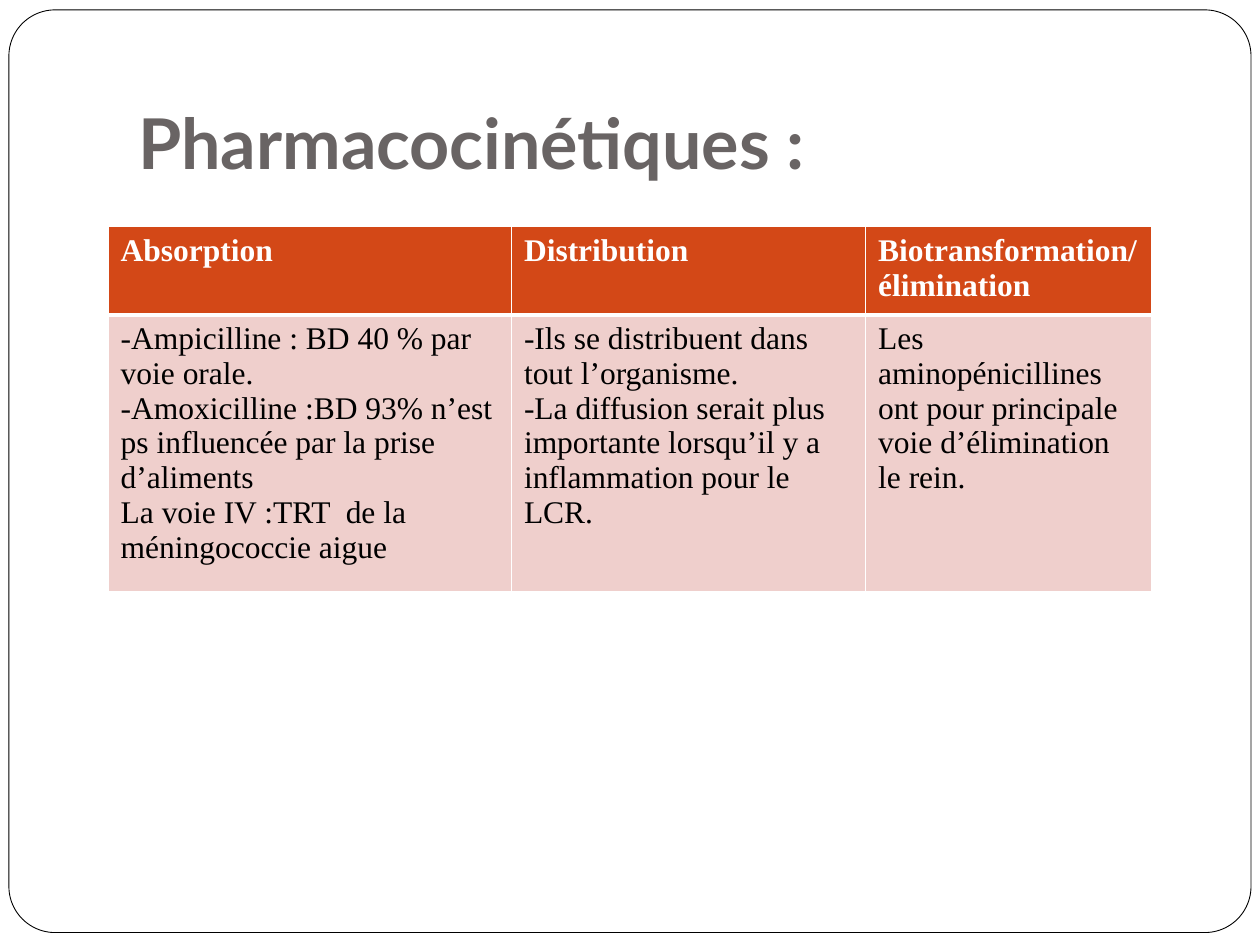
from dataclasses import dataclass

from lxml import etree
from pptx import Presentation
from pptx.dml.color import RGBColor
from pptx.enum.shapes import MSO_SHAPE
from pptx.enum.text import MSO_ANCHOR
from pptx.oxml.ns import qn
from pptx.util import Cm, Pt

ROUNDED = MSO_SHAPE.ROUNDED_RECTANGLE
BOTTOM = MSO_ANCHOR.BOTTOM


@dataclass(frozen=True)
class Theme:
    white: str = "FFFFFF"
    black: str = "000000"
    title: str = "696464"
    header: str = "D34817"
    body: str = "EFCFCC"
    title_font: str = "Lato"
    table_font: str = "Times New Roman"
    title_size: int = 40
    table_size: int = 18


theme = Theme()


def write(tf, lines, color, **font):
    """Fill a text frame with one paragraph per line."""
    for i, line in enumerate(lines):
        p = tf.paragraphs[0] if i == 0 else tf.add_paragraph()
        r = p.add_run()
        r.text = line
        r.font.color.rgb = RGBColor.from_string(color)
        for name, value in font.items():
            setattr(r.font, name, value)


def add_borders(cell, widths):
    """Draw white cell borders; widths maps L, R, T, B to points."""
    tc_pr = cell._tc.get_or_add_tcPr()
    for i, side in enumerate("LRTB"):
        ln = etree.Element(qn(f"a:ln{side}"), w=str(Pt(widths[side])))
        fill = etree.SubElement(ln, qn("a:solidFill"))
        etree.SubElement(fill, qn("a:srgbClr"), val=theme.white)
        tc_pr.insert(i, ln)


prs = Presentation()
prs.slide_width, prs.slide_height = Cm(25.4), Cm(19.05)
s = prs.slides.add_slide(prs.slide_layouts[6])

# Rounded frame
frame = s.shapes.add_shape(ROUNDED, Cm(0.18), Cm(0.2), Cm(25.04), Cm(18.6))
frame.adjustments[0] = 0.05
frame.shadow.inherit = False
frame.fill.solid()
frame.fill.fore_color.rgb = RGBColor.from_string(theme.white)
frame.line.color.rgb = RGBColor.from_string(theme.black)
frame.line.width = Pt(0.5)

# Title
title = s.shapes.add_textbox(Cm(2.54), Cm(0.76), Cm(21.59), Cm(3.18))
tf = title.text_frame
title_format = {
    "word_wrap": True,
    "vertical_anchor": BOTTOM,
    "margin_left": Cm(0.25),
    "margin_right": Cm(0.25),
    "margin_top": Cm(0.13),
    "margin_bottom": Cm(0.25),
}
for name, value in title_format.items():
    setattr(tf, name, value)
write(tf, ["Pharmacocinétiques :"], theme.title, name=theme.title_font,
      size=Pt(theme.title_size), bold=True)

# Table: one entry per column with width, heading and body lines
columns = [
    (8.13, "Absorption", [
        "-Ampicilline : BD 40 % par voie orale.",
        "-Amoxicilline :BD 93% n’est ps influencée par la prise d’aliments",
        "La voie IV :TRT  de la méningococcie aigue",
    ]),
    (7.14, "Distribution", [
        "-Ils se distribuent dans tout l’organisme.",
        "-La diffusion serait plus importante lorsqu’il y a inflammation "
        "pour le LCR.",
    ]),
    (5.77, "Biotransformation/ élimination", [
        "Les aminopénicillines ont pour principale voie d’élimination le rein.",
    ]),
]
row_heights = [1.65, 5.2]
table = s.shapes.add_table(
    len(row_heights), len(columns), Cm(2.18), Cm(4.57),
    Cm(sum(width for width, _, _ in columns)), Cm(sum(row_heights))).table
for row, height in zip(table.rows, row_heights):
    row.height = Cm(height)

for col, (width, heading, body) in enumerate(columns):
    table.columns[col].width = Cm(width)
    rows = [
        ([heading], theme.header, theme.white, True, {"T": 1, "B": 3}),
        (body, theme.body, theme.black, False, {"T": 3, "B": 1}),
    ]
    for row, (lines, fill, color, bold, edges) in enumerate(rows):
        cell = table.cell(row, col)
        cell.fill.solid()
        cell.fill.fore_color.rgb = RGBColor.from_string(fill)
        add_borders(cell, {"L": 1, "R": 1, **edges})
        write(cell.text_frame, lines, color, name=theme.table_font,
              size=Pt(theme.table_size), bold=bold)

prs.save("out.pptx")
